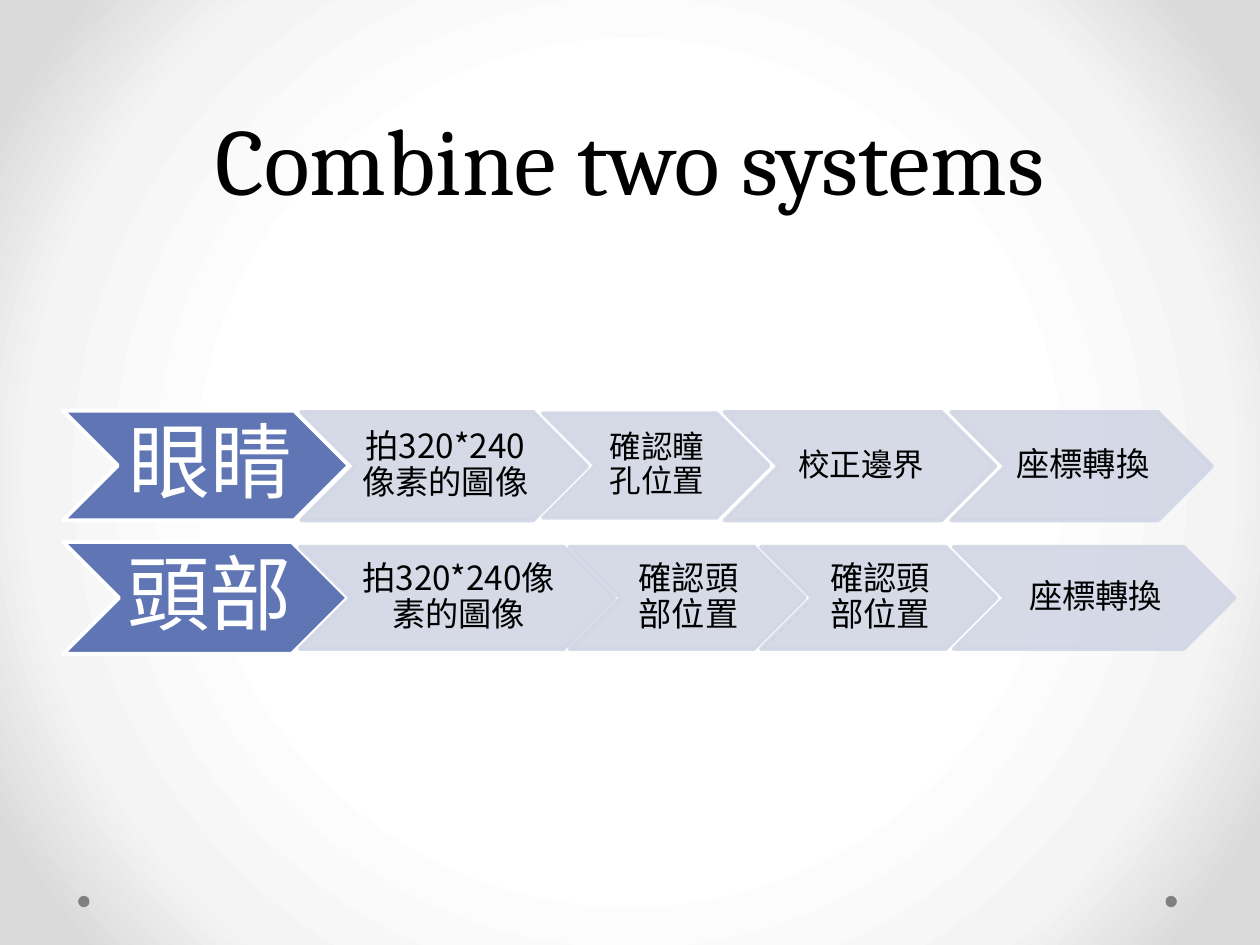
from dataclasses import dataclass

from lxml.etree import SubElement as Sub
from pptx import Presentation
from pptx.dml.color import RGBColor as Rgb
from pptx.enum.shapes import MSO_SHAPE as Shape
from pptx.enum.text import MSO_ANCHOR as Anchor, PP_ALIGN as Align
from pptx.oxml.ns import qn
from pptx.slide import Slide
from pptx.util import Inches, Pt

COLORS = {
    "head": "6076B4",
    "step": "D2D6E5",
    "white": "FFFFFF",
    "mist": "F4F4F4",
    "edge": "DADADA",
    "dot": "808080",
    "black": "000000",
}
SANS = "Noto Sans CJK SC"


@dataclass
class Step:
    text: str
    left: float
    top: float
    width: float
    height: float
    size: int = 19
    head: bool = False


STEPS = [
    Step("眼睛", 0.5, 3.26, 2.27, 0.87, 47, True),
    Step("拍320*240像素的圖像", 2.39, 3.27, 2.27, 0.86),
    Step("確認瞳孔位置", 4.31, 3.28, 1.79, 0.83, 18),
    Step("校正邊界", 5.75, 3.27, 2.15, 0.86, 18),
    Step("座標轉換", 7.55, 3.27, 2.07, 0.86),
    Step("頭部", 0.5, 4.3, 2.26, 0.89, 47, True),
    Step("拍320*240像素的圖像", 2.38, 4.34, 2.5, 0.81),
    Step("確認頭部位置", 4.52, 4.34, 1.87, 0.81),
    Step("確認頭部位置", 6.04, 4.34, 1.87, 0.81),
    Step("座標轉換", 7.57, 4.34, 2.23, 0.81),
]


def color(name: str) -> Rgb:
    return Rgb.from_string(COLORS[name])


def paint_back(slide: Slide) -> None:
    slide.background.fill.solid()
    back = slide.element.find(".//" + qn("p:bgPr"))
    back.remove(back[0])
    grad = Sub(back, qn("a:gradFill"), rotWithShape="1")
    back.insert(0, grad)
    stops = Sub(grad, qn("a:gsLst"))
    for pos, name in ((50, "white"), (76, "mist"), (92, "edge")):
        stop = Sub(stops, qn("a:gs"), pos=str(pos * 1000))
        Sub(stop, qn("a:srgbClr"), val=COLORS[name])
    shade = Sub(grad, qn("a:path"), path="circle")
    Sub(shade, qn("a:fillToRect"), l="50000", t="50000", r="50000", b="50000")


def add_dot(slide: Slide, left: float) -> None:
    dot = slide.shapes.add_shape(
        Shape.OVAL, Inches(left), Inches(7.11), Inches(0.09), Inches(0.09))
    dot.shadow.inherit = False
    dot.fill.solid()
    dot.fill.fore_color.rgb = color("dot")
    dot.line.fill.background()


def add_title(slide: Slide, text: str) -> None:
    box = slide.shapes.add_textbox(Inches(0.5), 0, Inches(9), Inches(1.75))
    frame = box.text_frame
    frame.word_wrap = True
    frame.vertical_anchor = Anchor.BOTTOM
    para = frame.paragraphs[0]
    para.text = text
    para.alignment = Align.CENTER
    para.line_spacing = Pt(58)
    para.font.size = Pt(54)
    para.font.name = "Cambria"
    para.font.color.rgb = color("black")


def add_step(slide: Slide, step: Step) -> None:
    arrow = slide.shapes.add_shape(
        Shape.CHEVRON, Inches(step.left), Inches(step.top),
        Inches(step.width), Inches(step.height))
    arrow.shadow.inherit = False
    arrow.fill.solid()
    arrow.fill.fore_color.rgb = color("head" if step.head else "step")
    arrow.line.color.rgb = color("white" if step.head else "step")
    arrow.line.width = Pt(2.25)
    if not step.head:
        for tone in arrow.element.spPr.iter(qn("a:srgbClr")):
            Sub(tone, qn("a:alpha"), val="90000")

    frame = arrow.text_frame
    frame.word_wrap = not step.head
    frame.vertical_anchor = Anchor.MIDDLE
    frame.margin_left = Inches(0.07 if step.head else 0.02)
    frame.margin_right = 0
    frame.margin_top = frame.margin_bottom = Inches(0.03 if step.head else 0.01)
    para = frame.paragraphs[0]
    para.text = step.text
    para.alignment = Align.CENTER
    para.line_spacing = 0.9
    para.font.size = Pt(step.size)
    para.font.name = SANS
    para.font.color.rgb = color("white" if step.head else "black")
    props = para._p.pPr.find(qn("a:defRPr"))
    Sub(props, qn("a:ea"), typeface=SANS)


def main() -> None:
    deck = Presentation()
    deck.slide_width, deck.slide_height = Inches(10), Inches(7.5)
    slide = deck.slides.add_slide(deck.slide_layouts[6])
    paint_back(slide)
    for left in (9.25, 0.62):
        add_dot(slide, left)
    add_title(slide, "Combine two systems")
    for step in STEPS:
        add_step(slide, step)
    deck.save("out.pptx")


if __name__ == "__main__":
    main()
